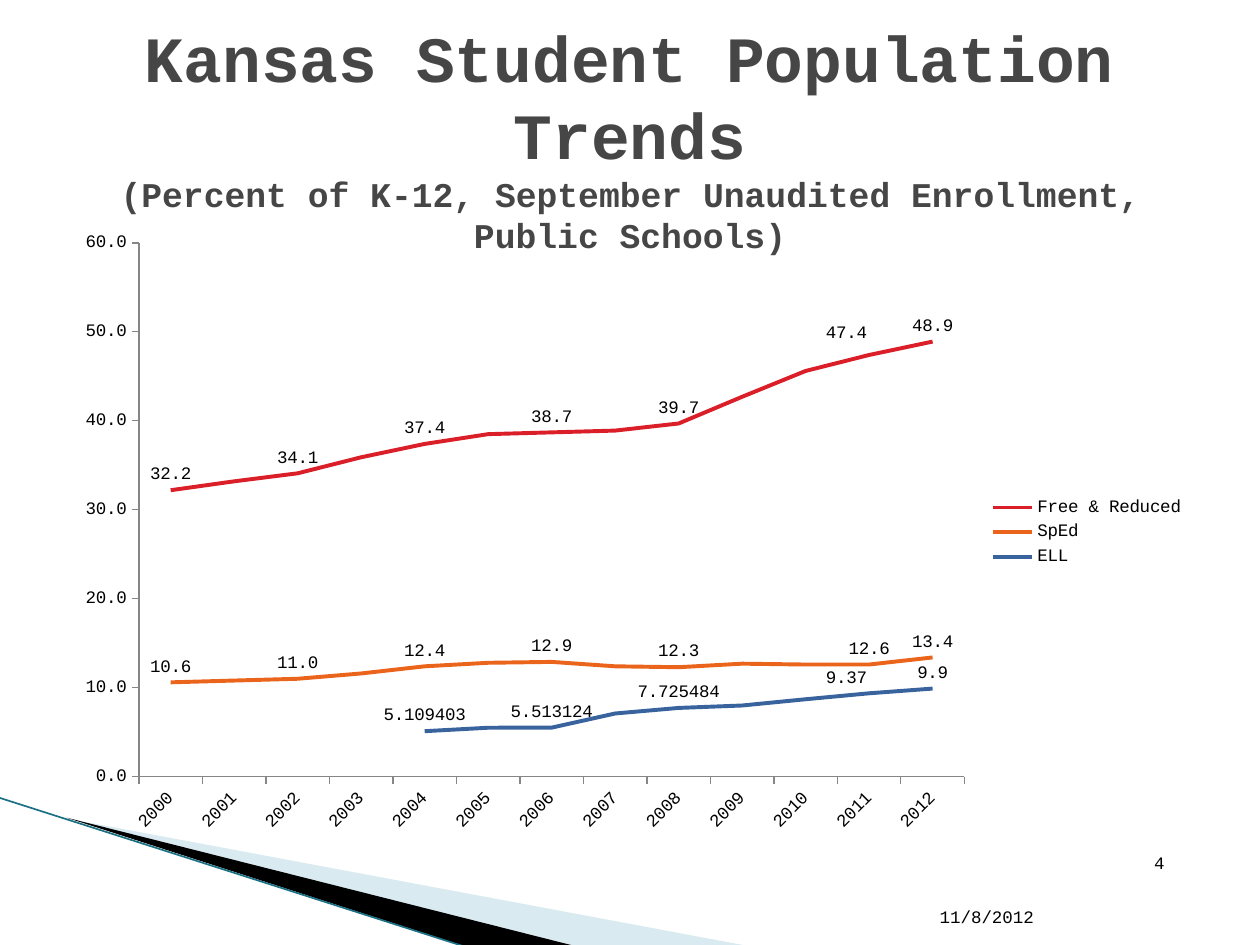
from dataclasses import dataclass, field
from typing import Optional

from lxml import etree
from pptx import Presentation, util as u
from pptx.chart.data import CategoryChartData
from pptx.dml.color import RGBColor
from pptx.enum import chart as ch, shapes, text
from pptx.oxml import parse_xml
from pptx.oxml.ns import nsdecls, qn

WIDTH, HEIGHT = 10, 7.5


@dataclass(frozen=True)
class Theme:
    font: str = "Courier New"
    heading: str = "464646"
    ink: str = "000000"
    axis: str = "868686"
    pale: str = "A0CBDC"
    edge: str = "1B7083"
    title_size: float = 36.9
    subtitle_size: float = 19.8
    body_size: float = 10
    series_width: float = 2.25


@dataclass(frozen=True)
class Trend:
    name: str
    color: str
    values: list[Optional[float]]
    number_format: str
    # Point index -> label shift, as shares of the chart's size
    shifts: dict[int, tuple[float, float]] = field(default_factory=dict)


@dataclass(frozen=True)
class Box:
    """Position and size as percentages of the slide."""
    left: float
    top: float
    width: float
    height: float

    def emu(self) -> list[int]:
        return [u.Inches(self.left * WIDTH / 100), u.Inches(self.top * HEIGHT / 100),
                u.Inches(self.width * WIDTH / 100), u.Inches(self.height * HEIGHT / 100)]


THEME = Theme()
YEARS = [str(year) for year in range(2000, 2013)]
UNLABELLED = [1, 3, 5, 7, 9, 10]
TRENDS = [
    Trend("Free & Reduced", "DA1F28",
          [32.2, 33.2, 34.1, 35.9, 37.4, 38.5, 38.7, 38.9, 39.7, 42.7, 45.6, 47.4, 48.9],
          "0.0", {11: (-0.02, -0.01)}),
    Trend("SpEd", "EB641B",
          [10.6, 10.8, 11.0, 11.6, 12.4, 12.8, 12.9, 12.4, 12.3, 12.7, 12.6, 12.6, 13.4],
          "0.0"),
    Trend("ELL", "39639D",
          [None] * 4 + [5.109403, 5.5, 5.513124, 7.1, 7.725484, 8.0, 8.7, 9.37, 9.9],
          "General", {11: (-0.02, 0)}),
]


def rgb(color: str) -> RGBColor:
    return RGBColor.from_string(color)


def style_font(font, size: float, color: str, bold: bool = False) -> None:
    font.name, font.size, font.bold = THEME.font, u.Pt(size), bold
    font.color.rgb = rgb(color)


def add_text(slide, box: Box, anchor, align):
    frame = slide.shapes.add_textbox(*box.emu()).text_frame
    frame.word_wrap = True
    frame.vertical_anchor = anchor
    paragraph = frame.paragraphs[0]
    paragraph.alignment = align
    return paragraph


def add_run(paragraph, words: str, size: float, color: str, bold: bool = False) -> None:
    run = paragraph.add_run()
    run.text = words
    style_font(run.font, size, color, bold)


def add_wedge(slide, points: list[tuple[float, float]], color: str, opacity: int = 100) -> None:
    corners = [(u.Inches(x), u.Inches(y)) for x, y in points]
    builder = slide.shapes.build_freeform(*corners[0])
    builder.add_line_segments(corners[1:], close=True)
    wedge = builder.convert_to_shape()
    wedge.shadow.inherit = False
    wedge.line.fill.background()
    wedge.fill.solid()
    wedge.fill.fore_color.rgb = rgb(color)
    if opacity < 100:
        fill_color = wedge.fill._xPr.find(".//" + qn("a:srgbClr"))
        etree.SubElement(fill_color, qn("a:alpha"), val=str(opacity * 1000))


def add_edge(slide, start: tuple[float, float], end: tuple[float, float]) -> None:
    edge = slide.shapes.add_connector(
        shapes.MSO_CONNECTOR.STRAIGHT, *(u.Inches(v) for v in start + end))
    edge.line.color.rgb = rgb(THEME.edge)
    edge.line.width = u.Pt(0.95)
    etree.SubElement(edge._element.spPr, qn("a:effectLst"))


def manual_layout(inner: bool = False, **shares: float):
    modes = '<c:layoutTarget val="inner"/><c:xMode val="edge"/><c:yMode val="edge"/>' if inner else ""
    values = "".join(f'<c:{key} val="{value}"/>' for key, value in shares.items())
    return parse_xml(f'<c:layout {nsdecls("c")}><c:manualLayout>{modes}{values}'
                     "</c:manualLayout></c:layout>")


def style_series(series, trend: Trend) -> None:
    series.smooth = False
    series.marker.style = ch.XL_MARKER_STYLE.NONE
    series.format.line.color.rgb = rgb(trend.color)
    series.format.line.width = u.Pt(THEME.series_width)
    labels = series.data_labels
    labels.show_value = True
    labels.position = ch.XL_LABEL_POSITION.ABOVE
    labels.number_format = trend.number_format
    labels.number_format_is_linked = False
    style_font(labels.font, THEME.body_size, THEME.ink)
    # Years without a label come first in the label list
    for place, index in enumerate(UNLABELLED):
        labels._element.insert(place, parse_xml(
            f'<c:dLbl {nsdecls("c")}><c:idx val="{index}"/><c:delete val="1"/></c:dLbl>'))
    for index, (x, y) in trend.shifts.items():
        label = series.points[index].data_label
        label.position = ch.XL_LABEL_POSITION.ABOVE
        point_label = labels._element.find(f'{qn("c:dLbl")}[last()]')
        point_label.insert(1, manual_layout(x=x, y=y))


def style_axis(axis) -> None:
    axis.has_major_gridlines = False
    axis.major_tick_mark = ch.XL_TICK_MARK.OUTSIDE
    axis.minor_tick_mark = ch.XL_TICK_MARK.NONE
    axis.format.line.color.rgb = rgb(THEME.axis)
    axis.format.line.width = u.Pt(0.75)
    style_font(axis.tick_labels.font, THEME.body_size, THEME.ink)


def add_trend_chart(slide, box: Box) -> None:
    data = CategoryChartData()
    data.categories = YEARS
    for trend in TRENDS:
        data.add_series(trend.name, trend.values, trend.number_format)
    chart = slide.shapes.add_chart(ch.XL_CHART_TYPE.LINE, *box.emu(), data).chart
    style_font(chart.font, THEME.body_size, THEME.ink)
    chart.has_title = False
    chart.has_legend = True
    chart.legend.position = ch.XL_LEGEND_POSITION.RIGHT
    chart.legend.include_in_layout = False
    chart.plots[0].vary_by_categories = False
    for series, trend in zip(chart.plots[0].series, TRENDS):
        style_series(series, trend)

    years, percent = chart.category_axis, chart.value_axis
    for axis in (years, percent):
        style_axis(axis)
    years._element.find(".//" + qn("a:bodyPr")).set("rot", "-2700000")
    percent.minimum_scale, percent.maximum_scale, percent.major_unit = 0, 60, 10
    percent.tick_labels.number_format = "0.0"
    percent.tick_labels.number_format_is_linked = False

    plot_area = chart._chartSpace.chart.plotArea
    for old in plot_area.findall(qn("c:layout")):
        plot_area.remove(old)
    plot_area.insert(0, manual_layout(True, x=0.067, y=0.036, w=0.728, h=0.856))


def main() -> None:
    deck = Presentation()
    deck.slide_width, deck.slide_height = u.Inches(WIDTH), u.Inches(HEIGHT)
    slide = deck.slides.add_slide(deck.slide_layouts[6])

    # Corner decoration
    add_wedge(slide, [(0.55, 6.5), (5.95, 7.51), (4.56, 7.51)], THEME.pale, 40)
    add_wedge(slide, [(0.53, 6.49), (4.57, 7.51), (3.72, 7.52)], THEME.ink)
    add_edge(slide, (-0.01, 6.33), (3.71, 7.52))

    # Title and subtitle
    title = add_text(slide, Box(5, 6.67, 90, 15.6),
                     text.MSO_ANCHOR.MIDDLE, text.PP_ALIGN.CENTER)
    add_run(title, "Kansas Student Population Trends", THEME.title_size, THEME.heading, True)
    title.add_line_break()
    add_run(title, "(Percent of K-12, September Unaudited Enrollment, Public Schools)",
            THEME.subtitle_size, THEME.heading, True)

    # Page number and date
    for words, box, align in (
            ("4", Box(89.2, 87.7, 4.2, 5.3), text.PP_ALIGN.RIGHT),
            ("11/8/2012", Box(73.6, 93.5, 21, 5.3), text.PP_ALIGN.LEFT)):
        footer = add_text(slide, box, text.MSO_ANCHOR.BOTTOM, align)
        add_run(footer, words, THEME.body_size, THEME.ink)

    add_trend_chart(slide, Box(5, 23.33, 90, 66))
    deck.save("out.pptx")


if __name__ == "__main__":
    main()
